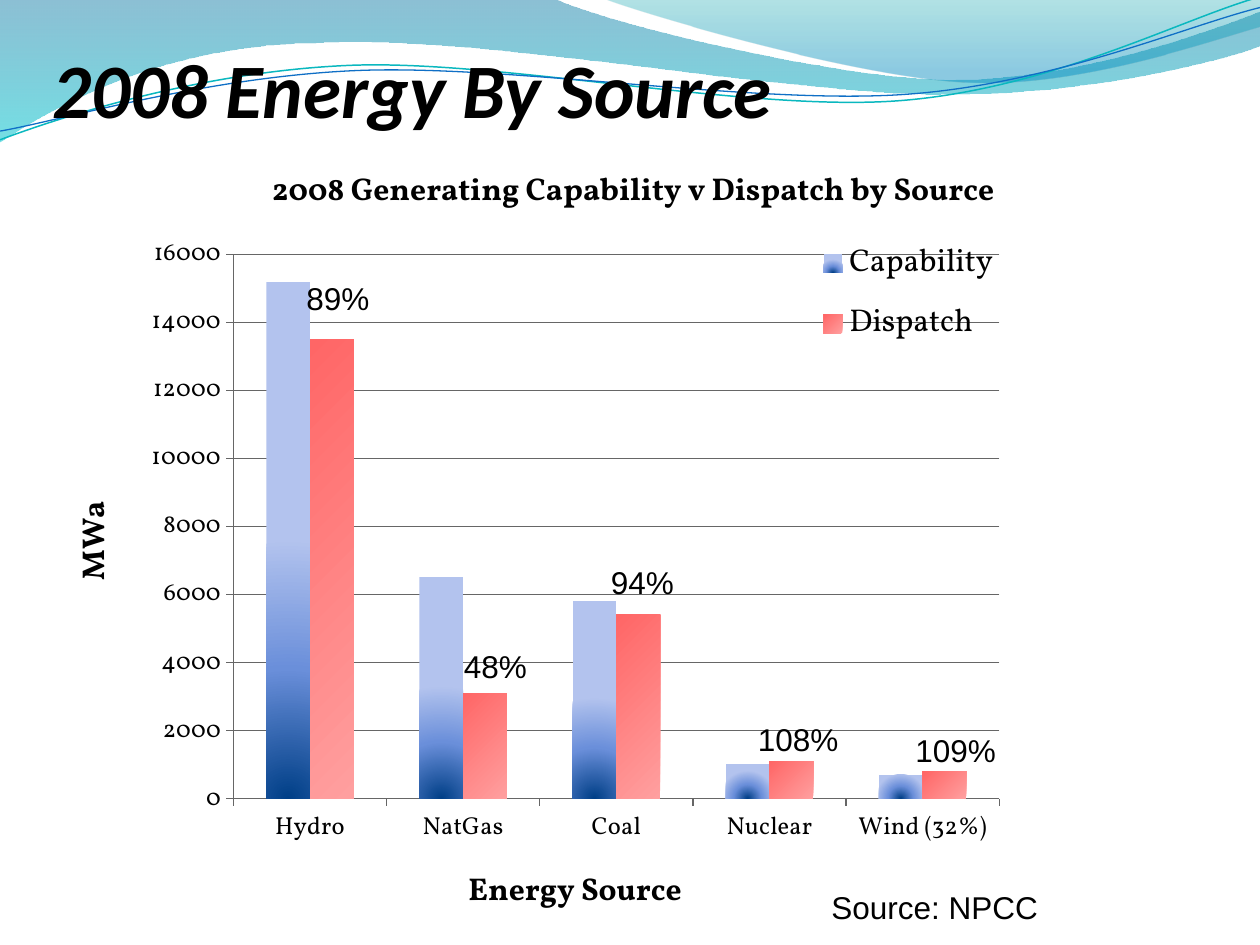
from lxml import etree
from pptx import Presentation
from pptx.chart.data import CategoryChartData as Data
from pptx.dml.color import RGBColor
from pptx.enum.chart import XL_CHART_TYPE as Kind, XL_LEGEND_POSITION as Pos, XL_TICK_MARK as Tick
from pptx.enum.text import MSO_ANCHOR as Anchor
from pptx.oxml import parse_xml
from pptx.oxml.ns import nsdecls, qn
from pptx.util import Pt

rgb = RGBColor.from_string


def shade(part, stops, kind):
    """Swap the solid fill of a part for a gradient of (place, colour, alpha)."""
    gs = "".join(
        f'<a:gs pos="{pos * 1000}"><a:srgbClr val="{hue}">'
        f'<a:alpha val="{alpha * 1000}"/></a:srgbClr></a:gs>'
        for pos, hue, alpha in stops)
    old = next(part.iter(qn("a:solidFill")))
    old.getparent().replace(old, parse_xml(
        f'<a:gradFill {nsdecls("a")} rotWithShape="1"><a:gsLst>{gs}</a:gsLst>{kind}</a:gradFill>'))


def place(part, slot, **dims):
    """Set a manual layout, in percent of the chart, as child number slot."""
    for old in part.findall(qn("c:layout")):
        part.remove(old)
    lay = etree.Element(qn("c:layout"))
    man = etree.SubElement(lay, qn("c:manualLayout"))
    if slot == 0:
        etree.SubElement(man, qn("c:layoutTarget"), val="inner")
    for key in "xy":
        etree.SubElement(man, qn(f"c:{key}Mode"), val="edge")
    for key, val in dims.items():
        etree.SubElement(man, qn(f"c:{key}"), val=str(val / 100))
    part.insert(slot, lay)


prs = Presentation()
prs.slide_width, prs.slide_height = Pt(720), Pt(540)
slide = prs.slides.add_slide(prs.slide_layouts[6])
shapes = slide.shapes

# Waves: a start, then lines (2 numbers) and curves (6); gradient or line
down = '<a:lin ang="5400000" scaled="1"/>'
waves = [
    ([(0, -0.7), (316.8, -0.7),
      (342.7, 12.2, 478, 45.4, 545.8, 45.4), (614.2, 45.4, 689.8, 18.7, 720, 6.5),
      (720.7, 25.9),
      (707.8, 31.7, 626.4, 54.7, 537.1, 54), (447.8, 54, 275, 20.2, 185, 24.5),
      (92.9, 25.2, 33.1, 59.8, -0.7, 81.4)],
     [(0, "0074A1", 45), (100, "00C6CF", 55)], None),
    ([(344.9, -0.7),
      (366.5, 7.9, 491, 44.6, 553.7, 46.8), (616.3, 49.7, 691.9, 23, 720, 15.1),
      (720, 0)],
     [(0, "00A1A9", 30), (80, "008BBF", 45)], None),
    ([(0, 79.9),
      (34.6, 67, 113.8, 41, 199.4, 37.4), (284.4, 33.8, 427, 64.1, 513.4, 57.6),
      (599.8, 51.1, 675.4, 10.8, 718.6, -1.4)], None, ("0AB8BF", 0.85)),
    ([(0, 74.9),
      (33.8, 69.1, 118.1, 43.9, 203.8, 40.3), (290.2, 36.7, 429.8, 59.8, 516.2, 54),
      (601.9, 48.2, 677.5, 14.8, 720, 4.3)], None, ("0F6FC6", 0.75)),
]
for (start, *legs), stops, line in waves:
    dots = [leg[i:i + 2] for leg in legs for i in range(0, len(leg), 2)]
    form = shapes.build_freeform(Pt(start[0]), Pt(start[1]))
    form.add_line_segments([(Pt(x), Pt(y)) for x, y in dots], close=bool(stops))
    wave = form.convert_to_shape()
    # Join each three points of a curve into one Bezier segment
    ends = iter(list(wave._element.iter(qn("a:lnTo"))))
    for leg in legs:
        first = next(ends)
        if len(leg) == 6:
            first.addprevious(curve := etree.Element(qn("a:cubicBezTo")))
            for end in (first, next(ends), next(ends)):
                curve.append(end[0])
                end.getparent().remove(end)
    wave.shadow.inherit = False
    if stops:
        wave.fill.solid()
        shade(wave._element, stops, down)
        wave.line.fill.background()
    else:
        wave.fill.background()
        wave.line.color.rgb = rgb(line[0])
        wave.line.width = Pt(line[1])

# Chart
data = Data()
data.categories = ["Hydro", "NatGas", "Coal", "Nuclear", "Wind (32%)"]
data.add_series("Capability", [15200, 6500, 5800, 1000, 700])
data.add_series("Dispatch", [13500, 3100, 5400, 1100, 800])
chart = shapes.add_chart(Kind.COLUMN_CLUSTERED, Pt(24), Pt(80.6), Pt(675.4), Pt(459.4), data).chart
chart.font.name, chart.font.size = "Vollkorn", Pt(10)
chart.font.color.rgb = rgb("000000")
plot = chart.plots[0]
plot.gap_width, plot.overlap, plot.vary_by_categories = 150, 0, False

# Column gradients
looks = [
    ([(0, "003F87", 100), (50, "6A8FDA", 100), (100, "B3C3EE", 100)],
     '<a:path path="circle"><a:fillToRect l="50000" t="100000" r="50000"/></a:path>'),
    ([(0, "FF6666", 100), (100, "FF9F9F", 100)],
     '<a:path path="circle"><a:fillToRect r="100000" b="100000"/></a:path>'),
]
for ser, (stops, kind) in zip(plot.series, looks):
    ser.format.fill.solid()
    ser.format.fill.fore_color.rgb = rgb(stops[0][1])
    shade(ser._element, stops, kind)

# Axes, titles and legend
cat, val = chart.category_axis, chart.value_axis
val.minimum_scale, val.maximum_scale, val.major_unit = 0, 16000, 2000
val.has_major_gridlines = True
for axis in (cat, val):
    axis.tick_labels.font.size = Pt(14)
    axis.major_tick_mark = Tick.OUTSIDE
for item in (cat, val, val.major_gridlines):
    item.format.line.color.rgb = rgb("666666")
    item.format.line.width = Pt(0.75)
for title, text, x, y in [
        (chart.chart_title, "2008 Generating Capability v Dispatch by Source", 19, 2.5),
        (cat.axis_title, "Energy Source", 35.6, 89.5),
        (val.axis_title, "MWa", 1.9, 44.1)]:
    title.text_frame.text = text
    font = title.text_frame.paragraphs[0].runs[0].font
    font.name, font.size, font.bold = "Vollkorn", Pt(18), True
    font.color.rgb = rgb("000000")
    place(title._element, 1, x=x, y=y)
chart.has_legend = True
legend = chart.legend
legend.position, legend.include_in_layout = Pos.RIGHT, True
legend.font.size = Pt(18)
place(legend._element, 1, x=65.3, y=10.5, w=16, h=17)
area = next(chart._chartSpace.iter(qn("c:plotArea")))
place(area, 0, x=16.2, y=14.1, w=64.8, h=67.7)

# Slide title
box = shapes.add_textbox(Pt(30), Pt(18), Pt(648), Pt(58.5))
frame = box.text_frame
frame.word_wrap, frame.vertical_anchor = True, Anchor.BOTTOM
frame.margin_left = frame.margin_right = frame.margin_bottom = 0
frame.text = "2008 Energy By Source"
font = frame.paragraphs[0].runs[0].font
font.name, font.size, font.bold, font.italic = "Calibri", Pt(44), True, True
font.color.rgb = rgb("000000")

# Shares over the columns, and the source
for text, x, y, w, wrap in [
        ("89%", 168, 156, 51, False), ("48%", 258, 366, 51, False),
        ("94%", 342, 318, 51, False), ("108%", 426, 408, 61, False),
        ("109%", 516, 414, 61, False), ("Source: NPCC", 468, 504, 228, True)]:
    frame = shapes.add_textbox(Pt(x), Pt(y), Pt(w), Pt(29)).text_frame
    frame.word_wrap = wrap
    frame.text = text
    font = frame.paragraphs[0].runs[0].font
    font.name, font.size = "Arial", Pt(18)
    font.color.rgb = rgb("000000")

prs.save("out.pptx")
